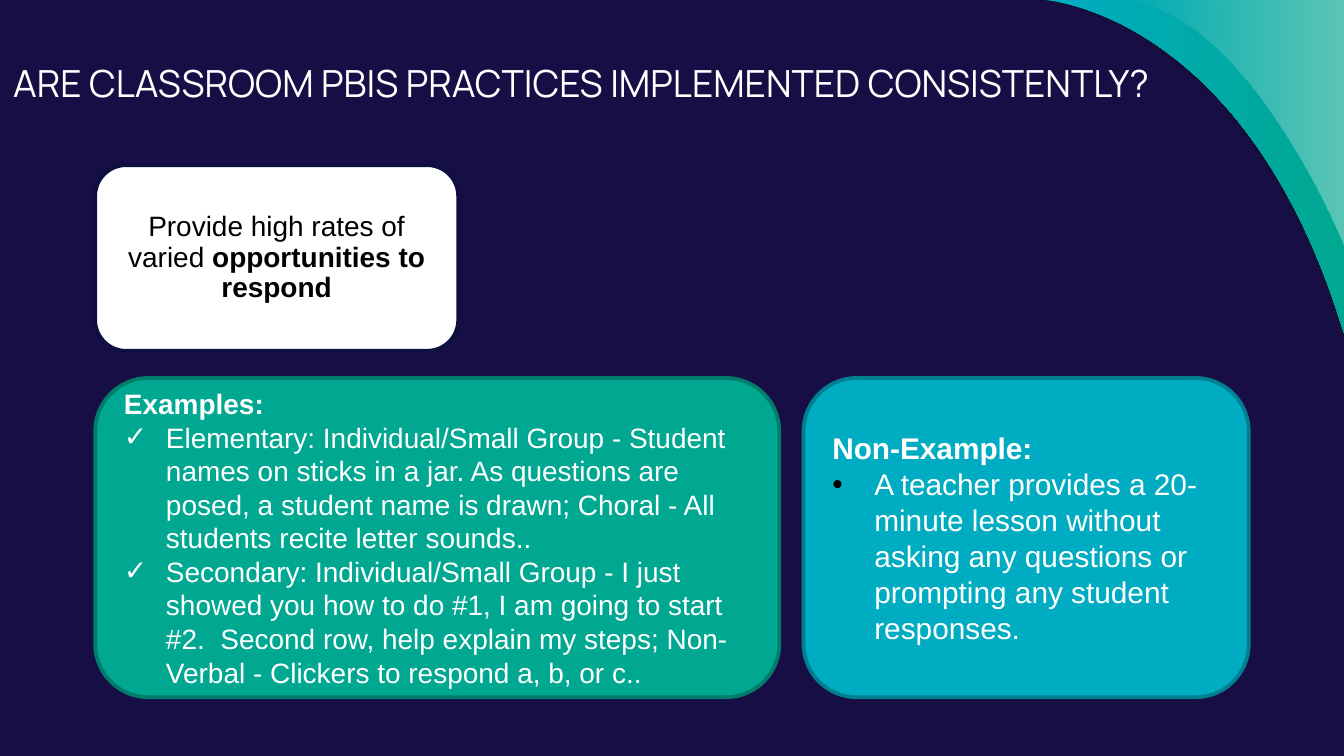
from dataclasses import dataclass

from lxml import etree
from pptx import Presentation
from pptx.dml.color import RGBColor
from pptx.enum.shapes import MSO_SHAPE
from pptx.enum.text import MSO_ANCHOR, PP_ALIGN
from pptx.oxml.ns import qn
from pptx.shapes.autoshape import Shape
from pptx.slide import Slide
from pptx.util import Pt

ROUNDED = MSO_SHAPE.ROUNDED_RECTANGLE
TOP, MIDDLE = MSO_ANCHOR.TOP, MSO_ANCHOR.MIDDLE
LEFT, CENTER = PP_ALIGN.LEFT, PP_ALIGN.CENTER

WHITE = RGBColor(0xFF, 0xFF, 0xFF)
BLACK = RGBColor(0x00, 0x00, 0x00)
NIGHT = RGBColor(0x16, 0x0E, 0x44)
SHADE = RGBColor(0x12, 0x10, 0x2F)
NAVY = RGBColor(0x0D, 0x0F, 0x41)
GREEN = RGBColor(0x00, 0xA7, 0x91)
DARK_GREEN = RGBColor(0x00, 0x7C, 0x6B)
CYAN = RGBColor(0x00, 0xAC, 0xC2)
DARK_CYAN = RGBColor(0x00, 0x7F, 0x90)

SLIDE_WIDTH, SLIDE_HEIGHT = 720, 405
BULLET_INDENT = 22.5
CURVE_STEPS = 40

Point = tuple[float, float]


@dataclass(frozen=True)
class Piece:
    text: str
    bold: bool = False


@dataclass(frozen=True)
class Line:
    pieces: tuple[Piece, ...]
    bullet: str = ""
    bullet_color: RGBColor = WHITE


@dataclass(frozen=True)
class TextStyle:
    size: float
    color: RGBColor = WHITE
    font: str = "Arial"
    alignment: PP_ALIGN = LEFT
    anchor: MSO_ANCHOR = MIDDLE
    spacing: float = 1.0


@dataclass(frozen=True)
class Card:
    left: float
    top: float
    width: float
    height: float
    fill: RGBColor
    outline: RGBColor
    style: TextStyle
    lines: tuple[Line, ...]


@dataclass(frozen=True)
class Swoosh:
    curve: tuple[Point, Point, Point, Point]
    colors: tuple[RGBColor, ...]
    opacities: tuple[int, ...]


SWOOSHES = (
    Swoosh(((555, 0), (555, 0), (666.5, 6), (720, 183)), (SHADE,), (54,)),
    Swoosh(((559.5, 0), (559.5, 0), (668, 6), (720, 178.5)), (CYAN, GREEN), (100, 100)),
    Swoosh(((602.5, 0), (670.5, 8), (720, 132.5), (720, 132.5)), (WHITE, WHITE), (0, 36)),
)

CARDS = (
    Card(51, 88.5, 194.5, 99.5, WHITE, NAVY, TextStyle(15, BLACK, alignment=CENTER, spacing=0.9), (
        Line((Piece("Provide high rates of varied "), Piece("opportunities to respond", True))),
    )),
    Card(51, 202.5, 366.5, 171, GREEN, DARK_GREEN, TextStyle(15), (
        Line((Piece("Examples:", True),)),
        Line((Piece("Elementary: Individual/Small Group - Student names on sticks in a jar. "
                    "As questions are posed, a student name is drawn; Choral - All students "
                    "recite letter sounds.."),), "✓"),
        Line((Piece("Secondary: Individual/Small Group - I just showed you how to do #1, "
                    "I am going to start #2.  Second row, help explain my steps; "
                    "Non-Verbal - Clickers to respond a, b, or c.."),), "✓"),
    )),
    Card(430.5, 202.5, 238.5, 171, CYAN, DARK_CYAN, TextStyle(16), (
        Line((Piece("Non-Example:", True),)),
        Line((Piece("A teacher provides a 20-minute lesson without asking any questions "
                    "or prompting any student responses."),), "•", BLACK),
    )),
)

TITLE = Line((Piece("ARE CLASSROOM PBIS PRACTICES IMPLEMENTED CONSISTENTLY?"),))


def set_values(target: object, values: dict[str, object]) -> None:
    for name, value in values.items():
        setattr(target, name, value)


def add_bullet(paragraph, line: Line) -> None:
    properties = paragraph._p.get_or_add_pPr()
    properties.set("marL", str(Pt(BULLET_INDENT)))
    properties.set("indent", str(-Pt(BULLET_INDENT)))
    color = etree.SubElement(properties, qn("a:buClr"))
    etree.SubElement(color, qn("a:srgbClr"), val=str(line.bullet_color))
    etree.SubElement(properties, qn("a:buFont"), typeface="Arial")
    etree.SubElement(properties, qn("a:buChar"), char=line.bullet)


def write_text(shape: Shape, lines: tuple[Line, ...], style: TextStyle) -> None:
    frame = shape.text_frame
    set_values(frame, {"word_wrap": True, "vertical_anchor": style.anchor})
    for index, line in enumerate(lines):
        paragraph = frame.add_paragraph() if index else frame.paragraphs[0]
        set_values(paragraph, {"alignment": style.alignment, "line_spacing": style.spacing})
        if line.bullet:
            add_bullet(paragraph, line)
        for piece in line.pieces:
            run = paragraph.add_run()
            run.text = piece.text
            set_values(run.font, {"name": style.font, "size": Pt(style.size), "bold": piece.bold})
            run.font.color.rgb = style.color


def curve_point(curve: tuple[Point, ...], t: float) -> Point:
    weights = ((1 - t) ** 3, 3 * t * (1 - t) ** 2, 3 * t ** 2 * (1 - t), t ** 3)
    x, y = (sum(w * p[axis] for w, p in zip(weights, curve)) for axis in (0, 1))
    return Pt(x), Pt(y)


def draw_swoosh(slide: Slide, swoosh: Swoosh) -> None:
    points = [curve_point(swoosh.curve, step / CURVE_STEPS) for step in range(CURVE_STEPS + 1)]
    builder = slide.shapes.build_freeform(*points[0])
    builder.add_line_segments(points[1:] + [(Pt(SLIDE_WIDTH), 0)], close=True)
    shape = builder.convert_to_shape()
    shape.shadow.inherit = False
    shape.line.fill.background()
    if len(swoosh.colors) == 1:
        shape.fill.solid()
        shape.fill.fore_color.rgb = swoosh.colors[0]
    else:
        shape.fill.gradient()
        shape.fill.gradient_angle = 0
        for stop, color in zip(shape.fill.gradient_stops, swoosh.colors):
            stop.color.rgb = color
    colors = shape._element.spPr.iter(qn("a:srgbClr"))
    for color, opacity in zip(list(colors), swoosh.opacities):
        etree.SubElement(color, qn("a:alpha"), val=str(opacity * 1000))


def draw_card(slide: Slide, card: Card) -> None:
    box = (Pt(value) for value in (card.left, card.top, card.width, card.height))
    shape = slide.shapes.add_shape(ROUNDED, *box)
    shape.shadow.inherit = False
    shape.fill.solid()
    shape.fill.fore_color.rgb = card.fill
    shape.line.color.rgb = card.outline
    shape.line.width = Pt(2)
    write_text(shape, card.lines, card.style)


def draw_title(slide: Slide) -> None:
    shape = slide.shapes.add_textbox(0, Pt(25), Pt(SLIDE_WIDTH), Pt(50))
    margins = ("margin_left", "margin_top", "margin_right", "margin_bottom")
    set_values(shape.text_frame, dict.fromkeys(margins, Pt(7.2)))
    write_text(shape, (TITLE,), TextStyle(20, font="Manrope", anchor=TOP))


def main() -> None:
    presentation = Presentation()
    set_values(presentation, {"slide_width": Pt(SLIDE_WIDTH), "slide_height": Pt(SLIDE_HEIGHT)})
    slide = presentation.slides.add_slide(presentation.slide_layouts[6])
    slide.background.fill.solid()
    slide.background.fill.fore_color.rgb = NIGHT
    for swoosh in SWOOSHES:
        draw_swoosh(slide, swoosh)
    for card in CARDS:
        draw_card(slide, card)
    draw_title(slide)
    presentation.save("out.pptx")


if __name__ == "__main__":
    main()
